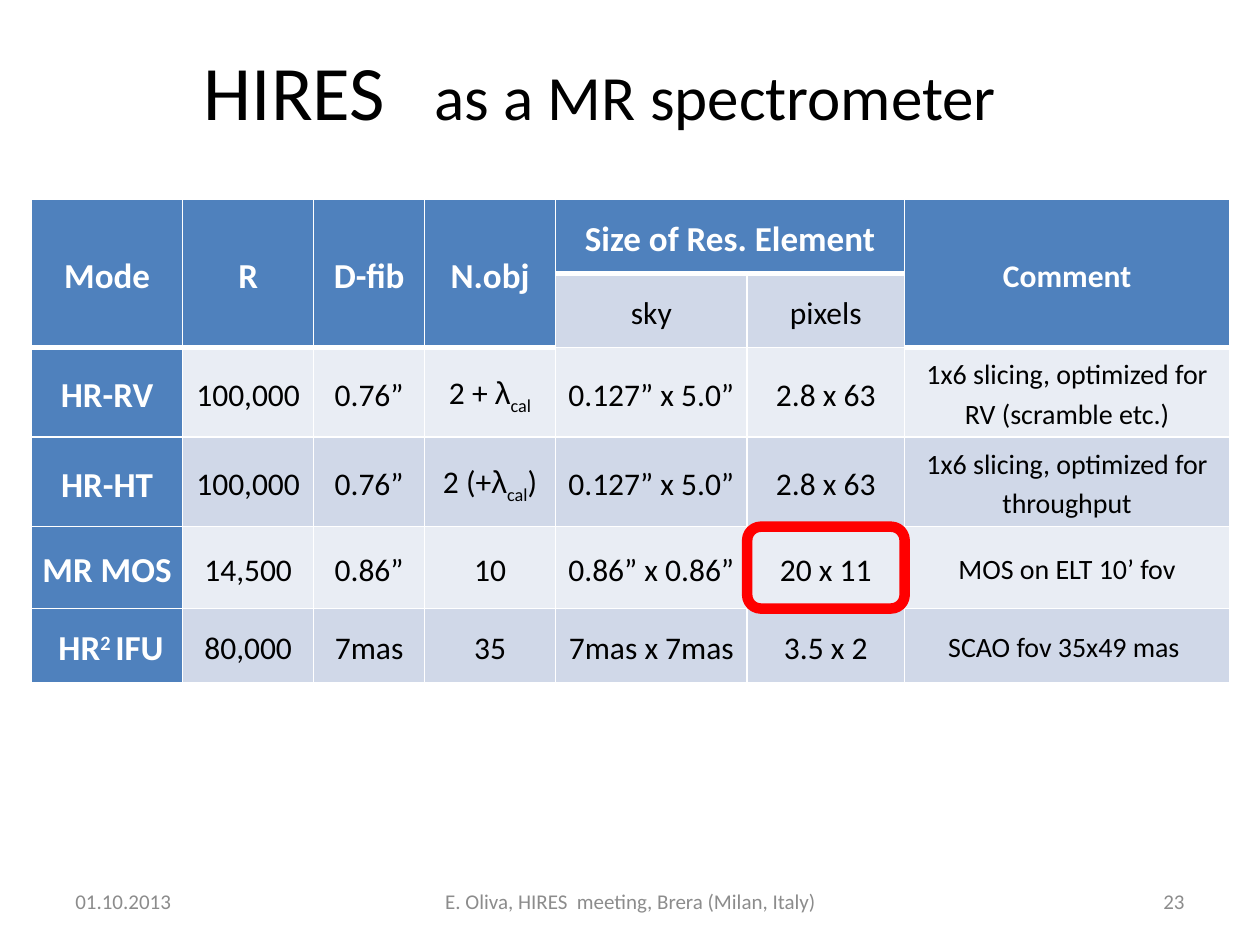
import pptx
import pptx.dml.color
import pptx.enum.shapes
import pptx.enum.text
import pptx.oxml
import pptx.oxml.ns
import pptx.util

Inches, Pt = pptx.util.Inches, pptx.util.Pt
RGBColor = pptx.dml.color.RGBColor
PP_ALIGN = pptx.enum.text.PP_ALIGN
MIDDLE = pptx.enum.text.MSO_ANCHOR.MIDDLE

BLACK = RGBColor(0x00, 0x00, 0x00)
WHITE = RGBColor(0xFF, 0xFF, 0xFF)
GREY = RGBColor(0x8C, 0x8C, 0x8C)
RED = RGBColor(0xFF, 0x00, 0x00)
HEADER_BLUE = RGBColor(0x4F, 0x81, 0xBD)
BAND_LIGHT = RGBColor(0xE9, 0xED, 0xF4)
BAND_DARK = RGBColor(0xD0, 0xD8, 0xE8)

COLUMNS = [1.2, 1.04, 0.88, 1.04, 1.52, 1.25, 2.58]
ROWS = [0.59, 0.59, 0.71, 0.71, 0.65, 0.59]
TABLE_LEFT, TABLE_TOP = 0.25, 1.58
SIZE_COLUMNS = (4, 5)
COMMENT = 6

# A cell is a string, or a list of (text, baseline shift in percent) pieces.
CELLS = [
    ["Mode", "R", "D-fib", "N.obj", "Size of Res. Element", "", "Comment"],
    ["", "", "", "", "sky", "pixels", ""],
    ["HR-RV", "100,000", "0.76”", [("2 + ", 0), ("λ", 0), ("cal", -25)],
     "0.127” x 5.0”", "2.8 x 63", "1x6 slicing, optimized for RV (scramble etc.)"],
    ["HR-HT", "100,000", "0.76”", [("2 (+", 0), ("λ", 0), ("cal", -25), (")", 0)],
     "0.127” x 5.0”", "2.8 x 63", "1x6 slicing, optimized for throughput"],
    ["MR MOS", "14,500", "0.86”", "10", "0.86” x 0.86”", "20 x 11",
     "MOS on ELT 10’ fov"],
    [[(" HR", 0), ("2 ", 30), ("IFU", 0)], "80,000", "7mas", "35",
     "7mas x 7mas", "3.5 x 2", "SCAO fov 35x49 mas "],
]


def add_run(paragraph, text, size, color, bold=False):
    run = paragraph.add_run()
    run.text = text
    run.font.name = "Arial" if text == "λ" else "Calibri"
    run.font.size = Pt(size)
    run.font.color.rgb = color
    run.font.bold = bold
    return run


def add_text_line(left, top, width, height, align):
    """Add a text box centred vertically and return its only paragraph."""
    box = slide.shapes.add_textbox(Inches(left), Inches(top), Inches(width), Inches(height))
    box.text_frame.word_wrap = True
    box.text_frame.vertical_anchor = MIDDLE
    paragraph = box.text_frame.paragraphs[0]
    paragraph.alignment = align
    return paragraph


prs = pptx.Presentation()
prs.slide_width, prs.slide_height = Inches(10), Inches(7.5)
slide = prs.slides.add_slide(prs.slide_layouts[6])

# Title
title = add_text_line(0.5, 0, 8.75, 1.42, PP_ALIGN.CENTER)
add_run(title, "HIRES  ", 44, BLACK)
add_run(title, " ", 36, BLACK).font.italic = True
add_run(title, "as a MR spectrometer  ", 36, BLACK)

# Footer
for text, left, width, align in [
    ("01.10.2013", 0.5, 2.33, PP_ALIGN.LEFT),
    ("E. Oliva, HIRES  meeting, Brera (Milan, Italy)", 3.42, 3.17, PP_ALIGN.CENTER),
    ("23", 7.17, 2.33, PP_ALIGN.RIGHT),
]:
    add_run(add_text_line(left, 6.95, width, 0.4, align), text, 12, GREY)

# Table of observing modes
modes = slide.shapes.add_table(
    len(ROWS), len(COLUMNS), Inches(TABLE_LEFT), Inches(TABLE_TOP),
    Inches(sum(COLUMNS)), Inches(sum(ROWS))).table
for column, width in zip(modes.columns, COLUMNS):
    column.width = Inches(width)
for row, height in zip(modes.rows, ROWS):
    row.height = Inches(height)

for c in range(len(COLUMNS)):
    if c not in SIZE_COLUMNS:
        modes.cell(0, c).merge(modes.cell(1, c))
modes.cell(0, SIZE_COLUMNS[0]).merge(modes.cell(0, SIZE_COLUMNS[1]))

for r, row_cells in enumerate(CELLS):
    for c, content in enumerate(row_cells):
        cell = modes.cell(r, c)
        header_rows = 1 if c in SIZE_COLUMNS else 2
        heading = r < header_rows or c == 0

        cell.fill.solid()
        cell.fill.fore_color.rgb = (
            HEADER_BLUE if heading else BAND_DARK if r % 2 else BAND_LIGHT)
        cell.vertical_anchor = MIDDLE
        cell.margin_left = cell.margin_right = Inches(0.07)
        cell.margin_top = cell.margin_bottom = 0

        size = 16 if c == COMMENT else 18
        if heading:
            size = 18 if c == COMMENT else 20
        paragraph = cell.text_frame.paragraphs[0]
        paragraph.alignment = PP_ALIGN.CENTER
        paragraph.line_spacing = 1.15
        pieces = [(content, 0)] if isinstance(content, str) else content
        for text, shift in pieces:
            if text:
                run = add_run(paragraph, text, size, WHITE if heading else BLACK, heading)
                if shift:
                    run.font._element.set("baseline", str(shift * 1000))

        # White rules, thicker under the header
        top_rule = 3 if r == header_rows else 1
        bottom_rule = 3 if r < header_rows else 1
        sides = [("lnL", 1), ("lnR", 1), ("lnT", top_rule), ("lnB", bottom_rule)]
        for position, (side, points) in enumerate(sides):
            rule = pptx.oxml.parse_xml(
                f'<a:{side} {pptx.oxml.ns.nsdecls("a")} w="{Pt(points)}">'
                f'<a:solidFill><a:srgbClr val="{WHITE}"/></a:solidFill></a:{side}>')
            cell._tc.get_or_add_tcPr().insert(position, rule)

# Frame around the MR MOS pixel size
highlight = slide.shapes.add_shape(
    pptx.enum.shapes.MSO_SHAPE.ROUNDED_RECTANGLE,
    Inches(TABLE_LEFT + sum(COLUMNS[:5])), Inches(TABLE_TOP + sum(ROWS[:4])),
    Inches(COLUMNS[5]), Inches(ROWS[4]))
highlight.shadow.inherit = False
highlight.fill.background()
highlight.line.color.rgb = RED
highlight.line.width = Pt(6)

prs.save("out.pptx")
